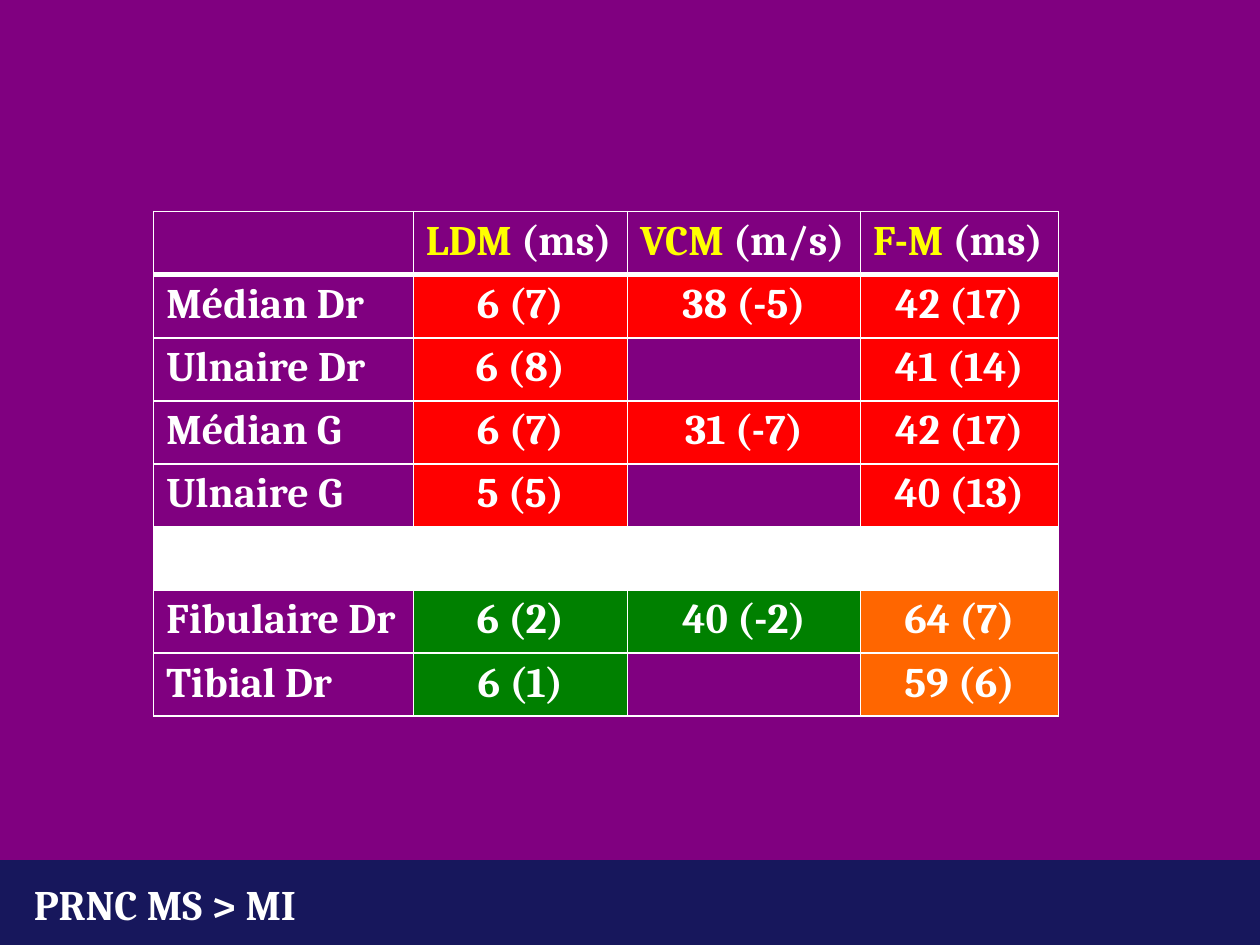
from dataclasses import dataclass
from typing import Any

from lxml.etree import SubElement
from pptx import Presentation
from pptx.dml.color import RGBColor
from pptx.enum.shapes import MSO_SHAPE as Shape
from pptx.enum.text import MSO_ANCHOR as Anchor, PP_ALIGN as Align
from pptx.oxml.ns import qn
from pptx.util import Inches, Pt

WIDTH, HEIGHT = 10, 7.5
COLORS = {
    "footer": "17175C",
    "panel": "800080",
    "text": "FFFFFF",
    "measure": "FFFF00",
    "severe": "FF0000",
    "moderate": "FF6600",
    "normal": "008000",
}


@dataclass
class ResultSlide:
    slide: Any
    font: str = "Cambria"
    size: int = 24

    def color(self, name):
        return RGBColor.from_string(COLORS[name])

    def box(self, left, top, width, height):
        return (Inches(left * WIDTH), Inches(top * HEIGHT),
                Inches(width * WIDTH), Inches(height * HEIGHT))

    def background(self, color):
        fill = self.slide.background.fill
        fill.solid()
        fill.fore_color.rgb = self.color(color)

    def panel(self, area, color):
        panel = self.slide.shapes.add_shape(Shape.RECTANGLE, *self.box(*area))
        panel.shadow.inherit = False
        panel.fill.solid()
        panel.fill.fore_color.rgb = self.color(color)
        panel.line.fill.background()

    def add_runs(self, frame, runs, align=Align.LEFT):
        paragraph = frame.paragraphs[0]
        paragraph.alignment = align
        for text, color in runs:
            run = paragraph.add_run()
            run.text = text
            run.font.name = self.font
            run.font.size = Pt(self.size)
            run.font.bold = True
            run.font.color.rgb = self.color(color)

    def label(self, area, text):
        frame = self.slide.shapes.add_textbox(*self.box(*area)).text_frame
        frame.word_wrap = True
        self.add_runs(frame, [(text, "text")])

    def borders(self, cell, **widths):
        properties = cell._tc.get_or_add_tcPr()
        for side in "LRTB":
            line = SubElement(properties, qn(f"a:ln{side}"),
                              w=str(Pt(widths.get(side, 1))))
            fill = SubElement(line, qn("a:solidFill"))
            SubElement(fill, qn("a:srgbClr"), val=COLORS["text"])

    def cell(self, cell, runs, fill=None, align=Align.LEFT, **widths):
        self.borders(cell, **widths)
        cell.vertical_anchor = Anchor.TOP
        if fill:
            cell.fill.solid()
            cell.fill.fore_color.rgb = self.color(fill)
        else:
            cell.fill.background()
        self.add_runs(cell.text_frame, runs, align)

    def table(self, area, column_widths, measures, results):
        table = self.slide.shapes.add_table(
            len(results) + 1, len(column_widths), *self.box(*area)).table
        table.horz_banding = False
        for column, width in zip(table.columns, column_widths):
            column.width = Inches(width * WIDTH)
        for position, measure in enumerate(measures):
            runs = []
            if measure:
                name, unit = measure
                runs = [(name, "measure"), (f" ({unit})", "text")]
            self.cell(table.cell(0, position), runs, B=3)
        for row, (nerve, *values) in enumerate(results, 1):
            widths = {"T": 3} if row == 1 else {}
            separator = None if nerve else "text"
            nerve_runs = [(nerve, "text")] if nerve else []
            self.cell(table.cell(row, 0), nerve_runs, separator, **widths)
            for position, value in enumerate(values, 1):
                text, grade = value or (None, separator)
                runs = [(text, "text")] if text else []
                self.cell(table.cell(row, position), runs, grade,
                          Align.CENTER, **widths)


def main():
    deck = Presentation()
    deck.slide_width, deck.slide_height = Inches(WIDTH), Inches(HEIGHT)
    page = ResultSlide(deck.slides.add_slide(deck.slide_layouts[6]))
    page.background("footer")
    page.panel((0, 0, 1, 0.91), "panel")
    page.label((0.017, 0.923, 0.492, 0.067), "PRNC MS > MI")

    measures = [None, ("LDM", "ms"), ("VCM", "m/s"), ("F-M", "ms")]
    results = [
        ("Médian Dr", ("6 (7)", "severe"), ("38 (-5)", "severe"), ("42 (17)", "severe")),
        ("Ulnaire Dr", ("6 (8)", "severe"), None, ("41 (14)", "severe")),
        ("Médian G", ("6 (7)", "severe"), ("31 (-7)", "severe"), ("42 (17)", "severe")),
        ("Ulnaire G", ("5 (5)", "severe"), None, ("40 (13)", "severe")),
        (None, None, None, None),
        ("Fibulaire Dr", ("6 (2)", "normal"), ("40 (-2)", "normal"), ("64 (7)", "moderate")),
        ("Tibial Dr", ("6 (1)", "normal"), None, ("59 (6)", "moderate")),
    ]
    page.table((0.122, 0.224, 0.718, 0.533), (0.206, 0.17, 0.185, 0.157),
               measures, results)
    deck.save("out.pptx")


if __name__ == "__main__":
    main()
